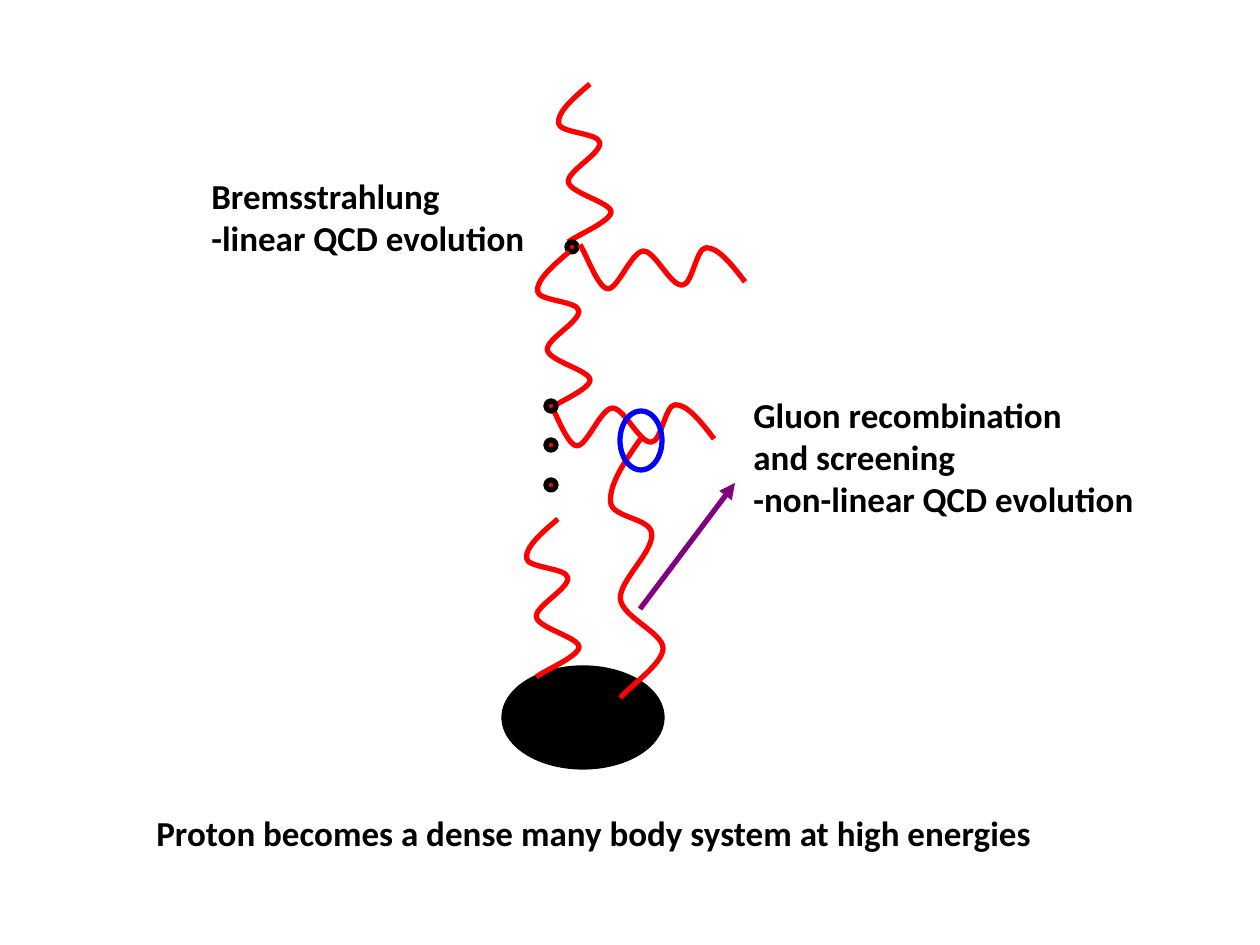
from lxml.etree import SubElement
from pptx import Presentation
from pptx.dml.color import RGBColor
from pptx.enum.shapes import MSO_CONNECTOR, MSO_SHAPE
from pptx.enum.text import MSO_AUTO_SIZE
from pptx.oxml.ns import qn
from pptx.util import Pt

EMU_PER_PX = 914400 / 126
BLACK, RED, BLUE, PURPLE = "000000", "FF0000", "0000FF", "800080"
GLUON_CURVE = [
    (61, 0),
    (30, 9), (0, 18), (3, 25),
    (5, 31), (77, 31), (79, 37),
    (83, 44), (19, 55), (21, 62),
    (24, 69), (100, 75), (100, 81),
    (100, 87), (35, 96), (21, 100),
]


def px(length):
    """Turn pixels into EMU."""
    return round(length * EMU_PER_PX)


def color(hex_value):
    """Return the colour for a hex string."""
    return RGBColor.from_string(hex_value)


def set_line(shape, hex_value):
    """Give a shape or connector the common line width and a colour."""
    shape.line.color.rgb = color(hex_value)
    shape.line.width = Pt(3)


def add_ellipse(shapes, left, top, width, height, line, fill=None):
    """Add an outlined ellipse, filled if a fill colour is given."""
    shape = shapes.add_shape(MSO_SHAPE.OVAL, px(left), px(top), px(width), px(height))
    shape.shadow.inherit = False
    set_line(shape, line)
    if fill:
        shape.fill.solid()
        shape.fill.fore_color.rgb = color(fill)
    else:
        shape.fill.background()


def add_gluon(shapes, left, top, width=54, height=158, rotation=0):
    """Add a wavy gluon line made of cubic curves fitted to a box."""
    start, *points = [
        (px(left + width * x / 100), px(top + height * y / 100)) for x, y in GLUON_CURVE
    ]
    builder = shapes.build_freeform(*start)
    builder.add_line_segments(points, close=False)
    shape = builder.convert_to_shape()
    outline = shape._element.find(".//" + qn("a:path"))
    segments = outline.findall(qn("a:lnTo"))
    for first in range(0, len(segments), 3):
        curve = SubElement(outline, qn("a:cubicBezTo"))
        for segment in segments[first:first + 3]:
            curve.append(segment[0])
            outline.remove(segment)
    shape.rotation = rotation
    shape.shadow.inherit = False
    shape.fill.background()
    set_line(shape, RED)


def add_vertex(shapes, left, top):
    """Add a small red dot with a black rim."""
    add_ellipse(shapes, left, top, 10, 10, BLACK, RED)


def add_arrow(shapes, start, end):
    """Add a purple arrow from start to end."""
    arrow = shapes.add_connector(MSO_CONNECTOR.STRAIGHT, *map(px, start + end))
    set_line(arrow, PURPLE)
    SubElement(arrow.line._get_or_add_ln(), qn("a:tailEnd"), type="triangle")
    SubElement(arrow._element.spPr, qn("a:effectLst"))


def add_label(shapes, left, top, width, height, text, wrap=False):
    """Add a bold text box with one paragraph per line of text."""
    text_frame = shapes.add_textbox(px(left), px(top), px(width), px(height)).text_frame
    text_frame.text = text
    text_frame.word_wrap = wrap
    text_frame.auto_size = MSO_AUTO_SIZE.SHAPE_TO_FIT_TEXT
    for paragraph in text_frame.paragraphs:
        for run in paragraph.runs:
            run.font.name = "Calibri"
            run.font.size = Pt(20)
            run.font.bold = True
            run.font.color.rgb = color(BLACK)


def add_ladder(shapes):
    """Add the gluon ladder that grows out of the proton."""
    add_gluon(shapes, 557, 84)
    add_vertex(shapes, 567, 242)
    add_gluon(shapes, 636, 184, 52, 168, 95.6)
    add_gluon(shapes, 536, 252)
    add_gluon(shapes, 605, 341, 52, 168, 95.6)
    for top in (401, 440, 480):
        add_vertex(shapes, 546, top)
    add_ellipse(shapes, 504, 668, 158, 99, BLACK, BLACK)
    add_gluon(shapes, 525, 519)
    add_gluon(shapes, 609, 437, height=261)
    add_ellipse(shapes, 620, 411, 42, 59, BLUE)


def main():
    """Build the slide and save it."""
    presentation = Presentation()
    presentation.slide_width, presentation.slide_height = px(1260), px(945)
    slide = presentation.slides.add_slide(presentation.slide_layouts[6])
    shapes = slide.shapes
    add_arrow(shapes, (640, 609), (735, 483))
    add_ladder(shapes.add_group_shape().shapes)
    add_label(shapes, 199, 168, 341, 97, "Bremsstrahlung\n-linear QCD evolution")
    add_label(shapes, 741, 387, 408, 140,
              "Gluon recombination\nand screening\n-non-linear QCD evolution")
    add_label(shapes, 144, 805, 1005, 55,
              "Proton becomes a dense many body system at high energies", wrap=True)
    presentation.save("out.pptx")


if __name__ == "__main__":
    main()
